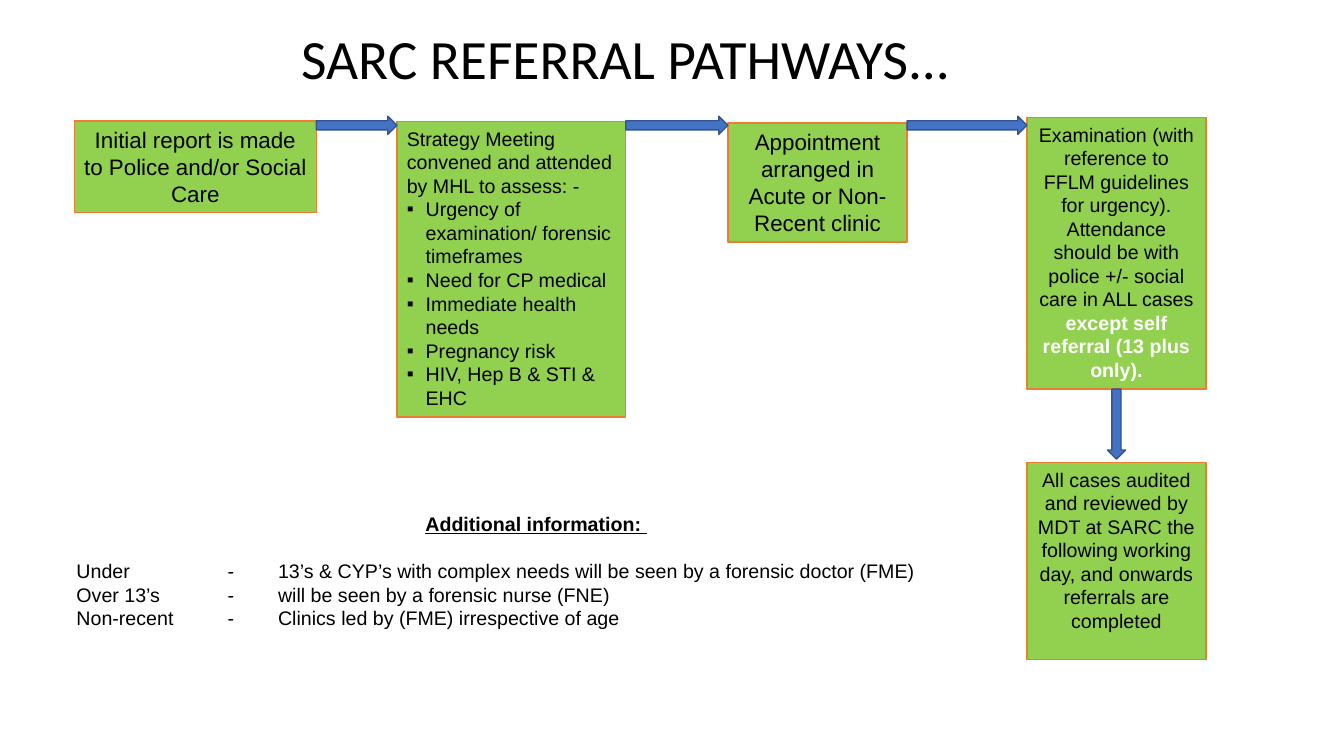
from collections import namedtuple
from dataclasses import dataclass

from lxml.etree import SubElement
from pptx import Presentation
from pptx.dml.color import RGBColor as RGB
from pptx.enum.shapes import MSO_SHAPE as SHAPE
from pptx.enum.text import MSO_ANCHOR as ANCHOR, PP_ALIGN as ALIGN
from pptx.oxml.ns import qn
from pptx.util import Pt

Box = namedtuple("Box", "x y w h")


@dataclass(frozen=True)
class Theme:
    step: RGB = RGB(0x92, 0xD0, 0x50)
    edge: RGB = RGB(0xED, 0x7D, 0x31)
    arrow: RGB = RGB(0x44, 0x72, 0xC4)
    rim: RGB = RGB(0x32, 0x54, 0x91)
    ink: RGB = RGB(0, 0, 0)
    white: RGB = RGB(255, 255, 255)
    body: str = "Arial"
    head: str = "Calibri"
    title: float = 39.6
    large: int = 16
    small: int = 14


THEME = Theme()
BULLET = 13.5
ARROW = 13


def pts(box):
    return [Pt(v) for v in box]


def style(para, size, name=THEME.body, align=ALIGN.LEFT):
    para.alignment = align
    for run in para.runs:
        font = run.font
        font.size, font.name = Pt(size), name
        font.color.rgb = THEME.ink


def shape(slide, kind, box, fill, line):
    item = slide.shapes.add_shape(kind, *pts(box))
    item.shadow.inherit = False
    item.fill.solid()
    item.fill.fore_color.rgb = fill
    item.line.color.rgb = line
    item.line.width = Pt(1)
    return item


def label(slide, box, text):
    frame = slide.shapes.add_textbox(*pts(box)).text_frame
    frame.word_wrap = True
    frame.text = text
    return frame


def bullet(para):
    props = para._p.get_or_add_pPr()
    props.set("marL", str(Pt(BULLET)))
    props.set("indent", str(-Pt(BULLET)))
    SubElement(props, qn("a:buFont"), typeface=THEME.body)
    SubElement(props, qn("a:buChar"), char="▪")


def tabs(para, stops):
    group = SubElement(para._p.get_or_add_pPr(), qn("a:tabLst"))
    for stop in stops:
        SubElement(group, qn("a:tab"), pos=str(Pt(stop)), algn="l")


def step(slide, box, text, size, align=ALIGN.CENTER):
    frame = shape(slide, SHAPE.RECTANGLE, box, THEME.step, THEME.edge).text_frame
    frame.word_wrap = True
    frame.vertical_anchor = ANCHOR.TOP
    frame.text = text
    for para in frame.paragraphs:
        style(para, size, align=align)
    return frame


def meeting(slide, box):
    text = "\n".join([
        "Strategy Meeting convened and attended by MHL to assess: -",
        "Urgency of examination/ forensic timeframes",
        "Need for CP medical",
        "Immediate health needs",
        "Pregnancy risk",
        "HIV, Hep B & STI & EHC",
    ])
    frame = step(slide, box, text, THEME.small, ALIGN.LEFT)
    for para in frame.paragraphs[1:]:
        bullet(para)


def exam(slide, box):
    frame = step(slide, box, "Examination (with reference to FFLM guidelines for "
                 "urgency). Attendance should be with police +/- social care "
                 "in ALL cases ", THEME.small)
    para = frame.paragraphs[0]
    note = para.add_run()
    note.text = "except self referral (13 plus only)."
    style(para, THEME.small, align=ALIGN.CENTER)
    note.font.bold = True
    note.font.color.rgb = THEME.white


def pathway(slide, box):
    # Steps along the top, with the audit under the last one
    x, y = box.x, box.y
    report = Box(x, y + 2.5, 173, 65.5)
    meet = Box(x + 230.5, y + 3, 163.5, 211)
    clinic = Box(x + 467, y + 4, 128, 85)
    check = Box(x + box.w - 128, y, 128, 194)
    audit = Box(check.x, y + box.h - 140.5, 128, 140.5)

    step(slide, report, "Initial report is made to Police and/or Social Care",
         THEME.large)
    meeting(slide, meet)
    step(slide, clinic, "Appointment arranged in Acute or Non-Recent clinic",
         THEME.large)
    exam(slide, check)
    step(slide, audit, "All cases audited and reviewed by MDT at SARC the "
         "following working day, and onwards referrals are completed",
         THEME.small)

    # Arrows fill the gaps between steps
    row = [report, meet, clinic, check]
    for left, right in zip(row, row[1:]):
        start = left.x + left.w
        gap = Box(start, y - 1, right.x - start, ARROW)
        shape(slide, SHAPE.RIGHT_ARROW, gap, THEME.arrow, THEME.rim)
    start = check.y + check.h
    drop = Box(check.x + (check.w - ARROW) / 2, start, ARROW,
               audit.y - start - 2.5)
    shape(slide, SHAPE.DOWN_ARROW, drop, THEME.arrow, THEME.rim)


def info(slide, box):
    # Underlined heading over three tabbed rows
    rows = [
        ("Under", "13’s & CYP’s with complex needs will be seen by a "
                  "forensic doctor (FME)"),
        ("Over 13’s", "will be seen by a forensic nurse (FNE)"),
        ("Non-recent", "Clinics led by (FME) irrespective of age"),
    ]
    lines = [f"{who}\t-\t{what}" for who, what in rows]
    frame = label(slide, box, "\n".join(["Additional information: ", *lines]))
    head, *rest = frame.paragraphs
    style(head, THEME.small, align=ALIGN.CENTER)
    head.space_after = Pt(17)
    font = head.runs[0].font
    font.bold = font.underline = True
    for para in rest:
        tabs(para, (108, 144))
        style(para, THEME.small)


def title(slide, box):
    frame = label(slide, box, "SARC REFERRAL PATHWAYS...")
    frame.vertical_anchor = ANCHOR.MIDDLE
    para = frame.paragraphs[0]
    para.line_spacing = 0.9
    style(para, THEME.title, THEME.head)


def main():
    deck = Presentation()
    deck.slide_width, deck.slide_height = Pt(960), Pt(540)
    slide = deck.slides.add_slide(deck.slide_layouts[6])
    pathway(slide, Box(53, 84, 808.5, 387))
    info(slide, Box(47.5, 362, 671, 109))
    title(slide, Box(208, 29, 686, 29.5))
    deck.save("out.pptx")


if __name__ == "__main__":
    main()
